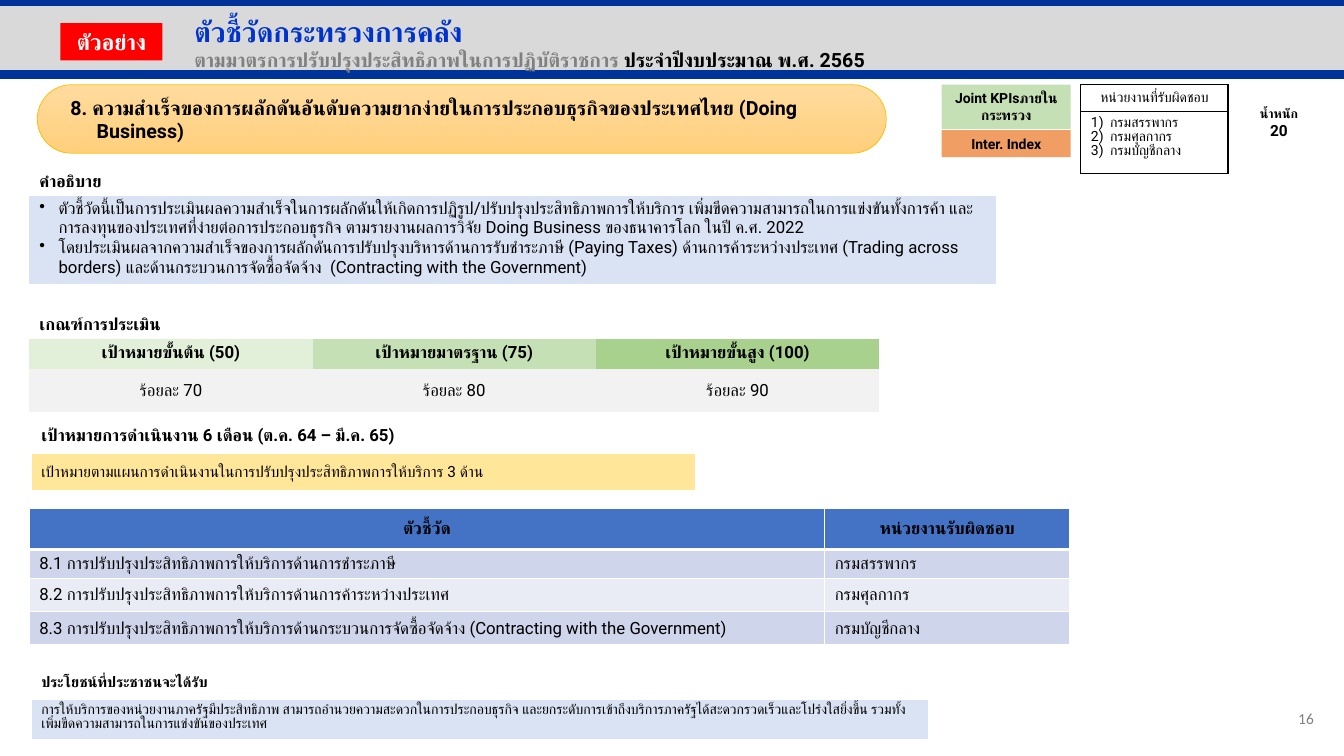
from lxml import etree
from pptx import Presentation
from pptx.dml.color import RGBColor
from pptx.enum.shapes import MSO_CONNECTOR, MSO_SHAPE
from pptx.enum.text import MSO_ANCHOR, PP_ALIGN
from pptx.oxml.ns import qn
from pptx.util import Inches, Pt

LEFT, CENTER, RIGHT = PP_ALIGN.LEFT, PP_ALIGN.CENTER, PP_ALIGN.RIGHT
TOP, MIDDLE = MSO_ANCHOR.TOP, MSO_ANCHOR.MIDDLE
RECT, ROUNDED = MSO_SHAPE.RECTANGLE, MSO_SHAPE.ROUNDED_RECTANGLE
STRAIGHT = MSO_CONNECTOR.STRAIGHT
rgb = RGBColor.from_string
BLACK, WHITE, GRAY, NAVY = "000000", "FFFFFF", "808080", "003399"
BULLET, NUMBER = ("a:buChar", "char", "•"), ("a:buAutoNum", "type", "arabicParenR")


def write(tf, paragraphs, align=LEFT, indent=0, bullet=None, spacing=None, font="Roboto"):
    for i, runs in enumerate(paragraphs):
        p = tf.paragraphs[0] if i == 0 else tf.add_paragraph()
        p.alignment = align
        if spacing:
            p.line_spacing = spacing
        pPr = p._p.get_or_add_pPr()
        if indent:
            pPr.set("marL", str(Inches(indent)))
            pPr.set("indent", str(Inches(-indent)))
        if bullet:
            tag, key, value = bullet
            etree.SubElement(pPr, qn(tag)).set(key, value)
        for text, size, color, bold in runs:
            r = p.add_run()
            r.text = text
            r.font.size, r.font.bold, r.font.name = Pt(size), bold, font
            r.font.color.rgb = rgb(color)
            etree.SubElement(r._r.get_or_add_rPr(), qn("a:cs")).set("typeface", font)


def add_grid(left, top, widths, heights, cells, border=None, head_bottom=1, pad=0.05):
    frame = s.shapes.add_table(len(heights), len(widths), Inches(left), Inches(top),
                               Inches(sum(widths)), Inches(sum(heights)))
    table = frame.table
    table.first_row = table.horz_banding = False
    for column, width in zip(table.columns, widths):
        column.width = Inches(width)
    for i, (height, row) in enumerate(zip(heights, cells)):
        table.rows[i].height = Inches(height)
        for j, (lines, size, bold, fill, anchor, style) in enumerate(row):
            cell = table.cell(i, j)
            cell.vertical_anchor = anchor
            cell.margin_top = cell.margin_bottom = Inches(pad)
            write(cell.text_frame, [[(line, size, BLACK, bold)] for line in lines], **style)
            tcPr = cell._tc.get_or_add_tcPr()
            for side in ("lnL", "lnR", "lnT", "lnB"):
                thick = head_bottom if (i, side) in ((0, "lnB"), (1, "lnT")) else 1
                ln = etree.SubElement(tcPr, qn("a:" + side), w=str(Pt(thick)))
                paint = etree.SubElement(ln, qn("a:solidFill" if border else "a:noFill"))
                if border:
                    etree.SubElement(paint, qn("a:srgbClr"), val=border)
            if fill:
                cell.fill.solid()
                cell.fill.fore_color.rgb = rgb(fill)
            else:
                cell.fill.background()
    return table


prs = Presentation()
prs.slide_width, prs.slide_height = Inches(13.33), Inches(7.5)
s = prs.slides.add_slide(prs.slide_layouts[6])

blocks = [
    (0, 0.05, 13.33, 0.68, "D9D9D9", TOP, None),
    (0.6, 0.23, 1.01, 0.37, "FF0000", TOP, ("ตัวอย่าง", 16, WHITE, True)),
    (9.34, 0.84, 1.28, 0.44, "C5E0B4", TOP, ("Joint KPIsภายในกระทรวง", 10, BLACK, True)),
    (9.34, 1.29, 1.28, 0.27, "F19E65", MIDDLE, ("Inter. Index", 10, BLACK, True)),
]
for left, top, width, height, fill, anchor, run in blocks:
    sp = s.shapes.add_shape(RECT, Inches(left), Inches(top), Inches(width), Inches(height))
    sp.shadow.inherit = False
    sp.fill.solid()
    sp.fill.fore_color.rgb = rgb(fill)
    sp.line.fill.background()
    if run:
        tf = sp.text_frame
        tf.word_wrap = True
        tf.vertical_anchor = anchor
        tf.margin_top = tf.margin_bottom = Inches(0.05)
        write(tf, [[run]], align=CENTER)

for y in (0.02, 0.74):
    rule = s.shapes.add_connector(STRAIGHT, 0, Inches(y), Inches(13.33), Inches(y))
    rule.line.color.rgb = rgb(NAVY)
    rule.line.width = Pt(6)
    etree.SubElement(rule._element.spPr, qn("a:effectLst"))

pill = s.shapes.add_shape(ROUNDED, Inches(0.37), Inches(0.84), Inches(8.42), Inches(0.68))
pill.adjustments[0] = 0.5
pill.shadow.inherit = False
pill.fill.gradient()
pill.fill.gradient_angle = 270
for stop, color in zip(pill.fill.gradient_stops, ("FFDB9E", "FFD07C")):
    stop.color.rgb = rgb(color)
pill.line.color.rgb = rgb("FFC000")
pill.line.width = Pt(0.5)

labels = [
    (1.83, 0.09, 8.43, 0.67, TOP, [
        [("ตัวชี้วัดกระทรวงการคลัง", 20, "0033CC", True)],
        [("ตามมาตรการปรับปรุงประสิทธิภาพในการปฏิบัติราชการ ", 14, GRAY, True),
         ("ประจำปีงบประมาณ พ.ศ. 2565", 14, BLACK, True)]], {}),
    (0.6, 0.9, 8.03, 0.57, TOP, [
        [("8. ความสำเร็จของการผลักดันอันดับความยากง่ายในการประกอบธุรกิจของประเทศไทย (Doing Business)",
          14, BLACK, True)]], {"indent": 0.26}),
    (12.08, 1, 1.21, 0.44, TOP, [
        [("น้ำหนัก", 9, BLACK, True)], [("20", 11, BLACK, True)]], {"align": CENTER}),
    (10.13, 6.93, 3, 0.4, MIDDLE, [[("16", 11, GRAY, False)]],
     {"align": RIGHT, "font": "Calibri"}),
]
for left, top, width, height, anchor, paragraphs, style in labels:
    tf = s.shapes.add_textbox(Inches(left), Inches(top), Inches(width), Inches(height)).text_frame
    tf.word_wrap = True
    tf.vertical_anchor = anchor
    write(tf, paragraphs, **style)

centered = {"align": CENTER}

add_grid(10.72, 0.84, [1.46], [0.26, 0.61], [
    [(["หน่วยงานที่รับผิดชอบ"], 10, False, None, TOP, centered)],
    [(["กรมสรรพากร", "กรมศุลกากร", "กรมบัญชีกลาง"], 10, False, None, TOP,
      {"indent": 0.19, "bullet": NUMBER, "spacing": 0.85})],
], border=BLACK)

add_grid(0.29, 1.68, [9.59], [0.26, 0.88], [
    [(["คำอธิบาย"], 12, True, WHITE, TOP, {})],
    [([
        "ตัวชี้วัดนี้เป็นการประเมินผลความสำเร็จในการผลักดันให้เกิดการปฏิรูป/ปรับปรุงประสิทธิภาพการให้บริการ เพิ่มขีดความสามารถในการแข่งขันทั้งการค้า และการลงทุนของประเทศที่ง่ายต่อการประกอบธุรกิจ ตามรายงานผลการวิจัย Doing Business ของธนาคารโลก ในปี ค.ศ. 2022",
        "โดยประเมินผลจากความสำเร็จของการผลักดันการปรับปรุงบริหารด้านการรับชำระภาษี (Paying Taxes) ด้านการค้าระหว่างประเทศ (Trading across borders) และด้านกระบวนการจัดซื้อจัดจ้าง  (Contracting with the Government)",
    ], 12, False, "DAE3F3", TOP, {"indent": 0.19, "bullet": BULLET})],
], pad=0.03)

targets = [("เป้าหมายขั้นต้น (50)", "E2F0D9", "ร้อยละ 70"),
           ("เป้าหมายมาตรฐาน (75)", "C5E0B4", "ร้อยละ 80"),
           ("เป้าหมายขั้นสูง (100)", "A9D18E", "ร้อยละ 90")]
criteria = add_grid(0.29, 3.08, [2.81] * 3, [0.28, 0.3, 0.43], [
    [(["เกณฑ์การประเมิน"], 12, True, WHITE, TOP, {})],
    [([name], 12, True, fill, TOP, centered) for name, fill, _ in targets],
    [([value], 12, False, "F2F2F2", MIDDLE, centered) for _, _, value in targets],
], pad=0.04)
criteria.cell(0, 0).merge(criteria.cell(0, 2))

add_grid(0.31, 4.17, [6.59], [0.33, 0.37], [
    [(["เป้าหมายการดำเนินงาน 6 เดือน (ต.ค. 64 – มี.ค. 65)"], 12, True, WHITE, TOP, {})],
    [(["เป้าหมายตามแผนการดำเนินงานในการปรับปรุงประสิทธิภาพการให้บริการ 3 ด้าน"],
      11, False, "FFE699", MIDDLE, {})],
], border=WHITE)

indicators = [
    ("8.1 การปรับปรุงประสิทธิภาพการให้บริการด้านการชำระภาษี", "กรมสรรพากร", "CFD5EA"),
    ("8.2 การปรับปรุงประสิทธิภาพการให้บริการด้านการค้าระหว่างประเทศ", "กรมศุลกากร", "E9EBF5"),
    ("8.3 การปรับปรุงประสิทธิภาพการให้บริการด้านกระบวนการจัดซื้อจัดจ้าง (Contracting with the Government)",
     "กรมบัญชีกลาง", "CFD5EA"),
]
add_grid(0.29, 5.04, [7.89, 2.43], [0.41, 0.29, 0.33, 0.33], [
    [([head], 12, True, "4472C4", MIDDLE, centered) for head in ("ตัวชี้วัด", "หน่วยงานรับผิดชอบ")],
    *[[([text], 12, False, fill, MIDDLE, {}) for text in (name, unit)]
      for name, unit, fill in indicators],
], border=WHITE, head_bottom=3, pad=0.04)

add_grid(0.31, 6.64, [8.9], [0.29, 0.41], [
    [(["ประโยชน์ที่ประชาชนจะได้รับ"], 10.5, True, WHITE, TOP, {})],
    [(["การให้บริการของหน่วยงานภาครัฐมีประสิทธิภาพ สามารถอำนวยความสะดวกในการประกอบธุรกิจ และยกระดับการเข้าถึงบริการภาครัฐได้สะดวกรวดเร็วและโปร่งใสยิ่งขึ้น รวมทั้งเพิ่มขีดความสามารถในการแข่งขันของประเทศ"],
      10, False, "DAE3F3", TOP, {"spacing": 0.85})],
], border=WHITE, head_bottom=3)

prs.save("out.pptx")
